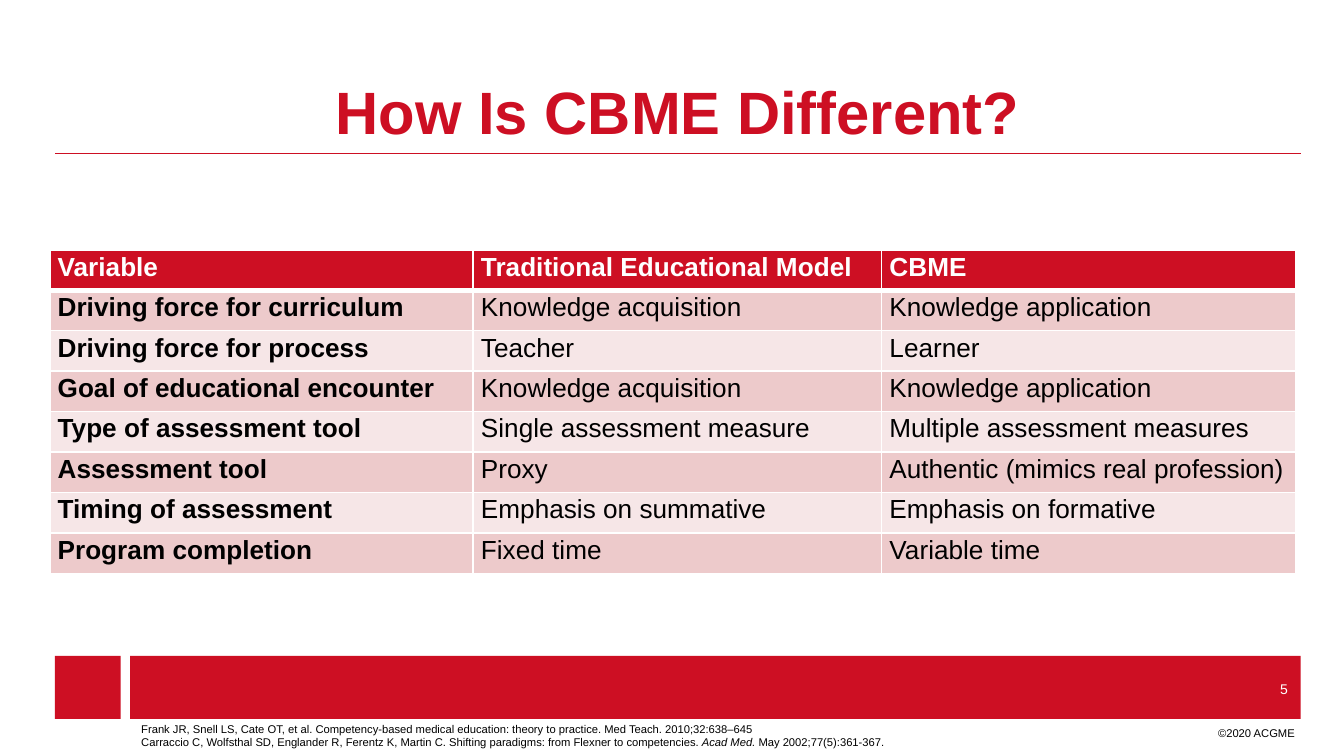
"""Build the slide that compares CBME with the traditional educational model."""
from dataclasses import dataclass

from lxml.etree import SubElement
from pptx import Presentation
from pptx.dml.color import RGBColor
from pptx.enum.shapes import MSO_CONNECTOR, MSO_SHAPE
from pptx.enum.text import MSO_ANCHOR, MSO_AUTO_SIZE, PP_ALIGN
from pptx.oxml.ns import qn
from pptx.util import Cm, Pt


@dataclass(frozen=True)
class Theme:
    """Colours, type sizes and line widths."""
    red: str = "CD0F23"
    white: str = "FFFFFF"
    black: str = "000000"
    bands: tuple = ("EDCACB", "F6E6E7")
    font: str = "Arial"
    title: float = 32
    table: float = 14
    number: float = 7.5
    small: float = 6
    rule: float = 0.75
    grid: float = 1
    header_grid: float = 3


@dataclass(frozen=True)
class Box:
    """Position and size in centimetres."""
    left: float
    top: float
    width: float
    height: float

    def lengths(self) -> tuple:
        """Return the four lengths for a shape call."""
        return Cm(self.left), Cm(self.top), Cm(self.width), Cm(self.height)


@dataclass(frozen=True)
class Comparison:
    """One row of the table."""
    variable: str
    traditional: str
    cbme: str


THEME = Theme()
TITLE_BOX = Box(1.04, 1.4, 23.55, 1.5)
TABLE_BOX = Box(0.94, 4.72, 23.54, 6.12)
COLUMN_WIDTHS = (8, 7.72, 7.82)
FOOTER_BLOCKS = (Box(2.46, 12.4, 22.12, 1.19), Box(1.04, 12.4, 1.24, 1.19))
COMPARISONS = (
    Comparison("Variable", "Traditional Educational Model", "CBME"),
    Comparison("Driving force for curriculum", "Knowledge acquisition", "Knowledge application"),
    Comparison("Driving force for process", "Teacher", "Learner"),
    Comparison("Goal of educational encounter", "Knowledge acquisition", "Knowledge application"),
    Comparison("Type of assessment tool", "Single assessment measure", "Multiple assessment measures"),
    Comparison("Assessment tool", "Proxy", "Authentic (mimics real profession)"),
    Comparison("Timing of assessment", "Emphasis on summative", "Emphasis on formative"),
    Comparison("Program completion", "Fixed time", "Variable time"),
)


def write(paragraph, text: str, *, size: float, color: str = THEME.black,
          bold: bool = False, italic: bool = False, align=PP_ALIGN.LEFT) -> None:
    """Append a formatted run to a paragraph."""
    paragraph.alignment = align
    run = paragraph.add_run()
    run.text = text
    run.font.name = THEME.font
    run.font.size = Pt(size)
    run.font.bold = bold
    run.font.italic = italic
    run.font.color.rgb = RGBColor.from_string(color)


def set_margins(target, left: float, top: float, right: float, bottom: float) -> None:
    """Set the inner margins of a text frame or cell in centimetres."""
    target.margin_left, target.margin_top = Cm(left), Cm(top)
    target.margin_right, target.margin_bottom = Cm(right), Cm(bottom)


def add_text_frame(slide, box: Box, right_margin: float = 0.25, anchor=MSO_ANCHOR.TOP):
    """Add a wrapping text box and return its text frame."""
    frame = slide.shapes.add_textbox(*box.lengths()).text_frame
    frame.word_wrap = True
    frame.vertical_anchor = anchor
    set_margins(frame, 0.25, 0.13, right_margin, 0.13)
    return frame


def add_block(slide, box: Box) -> None:
    """Add a plain red rectangle."""
    block = slide.shapes.add_shape(MSO_SHAPE.RECTANGLE, *box.lengths())
    block.shadow.inherit = False
    block.fill.solid()
    block.fill.fore_color.rgb = RGBColor.from_string(THEME.red)
    block.line.fill.background()


def add_title(slide, text: str) -> None:
    """Fill the title placeholder and rule a line under it."""
    title = slide.shapes.title
    title.left, title.top, title.width, title.height = TITLE_BOX.lengths()
    frame = title.text_frame
    frame.auto_size = MSO_AUTO_SIZE.NONE
    frame.vertical_anchor = MSO_ANCHOR.BOTTOM
    set_margins(frame, 0, 0, 0, 0.13)
    write(frame.paragraphs[0], text, size=THEME.title, color=THEME.red,
          bold=True, align=PP_ALIGN.CENTER)
    bottom = Cm(TITLE_BOX.top + TITLE_BOX.height)
    rule = slide.shapes.add_connector(MSO_CONNECTOR.STRAIGHT, title.left, bottom,
                                      title.left + title.width, bottom)
    rule.line.color.rgb = RGBColor.from_string(THEME.red)
    rule.line.width = Pt(THEME.rule)
    SubElement(rule.element.spPr, qn("a:effectLst"))


def add_borders(cell, row: int) -> None:
    """Give a cell white borders, heavier under the header row."""
    heavy_side = {0: "lnB", 1: "lnT"}.get(row)
    properties = cell._tc.get_or_add_tcPr()
    for side in ("lnL", "lnR", "lnT", "lnB"):
        width = THEME.header_grid if side == heavy_side else THEME.grid
        border = SubElement(properties, qn(f"a:{side}"), w=str(Pt(width)))
        fill = SubElement(border, qn("a:solidFill"))
        SubElement(fill, qn("a:srgbClr"), val=THEME.white)


def add_comparison_table(slide) -> None:
    """Add the table with its header and banded rows."""
    table = slide.shapes.add_table(len(COMPARISONS), len(COLUMN_WIDTHS),
                                   *TABLE_BOX.lengths()).table
    for column, width in zip(table.columns, COLUMN_WIDTHS):
        column.width = Cm(width)
    for row, comparison in enumerate(COMPARISONS):
        table.rows[row].height = Cm(TABLE_BOX.height / len(COMPARISONS))
        is_header = row == 0
        background = THEME.red if is_header else THEME.bands[(row - 1) % 2]
        entries = (comparison.variable, comparison.traditional, comparison.cbme)
        for column, entry in enumerate(entries):
            cell = table.cell(row, column)
            set_margins(cell, 0.15, 0.05, 0.15, 0.05)
            add_borders(cell, row)
            cell.fill.solid()
            cell.fill.fore_color.rgb = RGBColor.from_string(background)
            write(cell.text_frame.paragraphs[0], entry, size=THEME.table,
                  color=THEME.white if is_header else THEME.black,
                  bold=is_header or column == 0)


def add_footer(slide) -> None:
    """Add the red blocks, slide number, copyright line and references."""
    for box in FOOTER_BLOCKS:
        add_block(slide, box)
    number = add_text_frame(slide, Box(22.48, 12.7, 2.11, 0.64), anchor=MSO_ANCHOR.MIDDLE)
    write(number.paragraphs[0], "5", size=THEME.number, color=THEME.white, align=PP_ALIGN.RIGHT)
    rights = add_text_frame(slide, Box(22.63, 13.61, 2.21, 0.51), right_margin=0.37)
    write(rights.paragraphs[0], "©2020 ACGME", size=THEME.small, align=PP_ALIGN.RIGHT)
    references = add_text_frame(slide, Box(2.42, 13.52, 17.45, 0.76))
    write(references.paragraphs[0],
          "Frank JR, Snell LS, Cate OT, et al. Competency-based medical education: "
          "theory to practice. Med Teach. 2010;32:638–645", size=THEME.small)
    second = references.add_paragraph()
    write(second, "Carraccio C, Wolfsthal SD, Englander R, Ferentz K, Martin C. "
          "Shifting paradigms: from Flexner to competencies. ", size=THEME.small)
    write(second, "Acad Med. ", size=THEME.small, italic=True)
    write(second, "May 2002;77(5):361-367.", size=THEME.small)


def main() -> None:
    """Build and save the presentation."""
    presentation = Presentation()
    presentation.slide_width, presentation.slide_height = Cm(25.4), Cm(14.29)
    slide = presentation.slides.add_slide(presentation.slide_layouts[5])
    add_title(slide, "How Is CBME Different?")
    add_comparison_table(slide)
    add_footer(slide)
    presentation.save("out.pptx")


if __name__ == "__main__":
    main()
